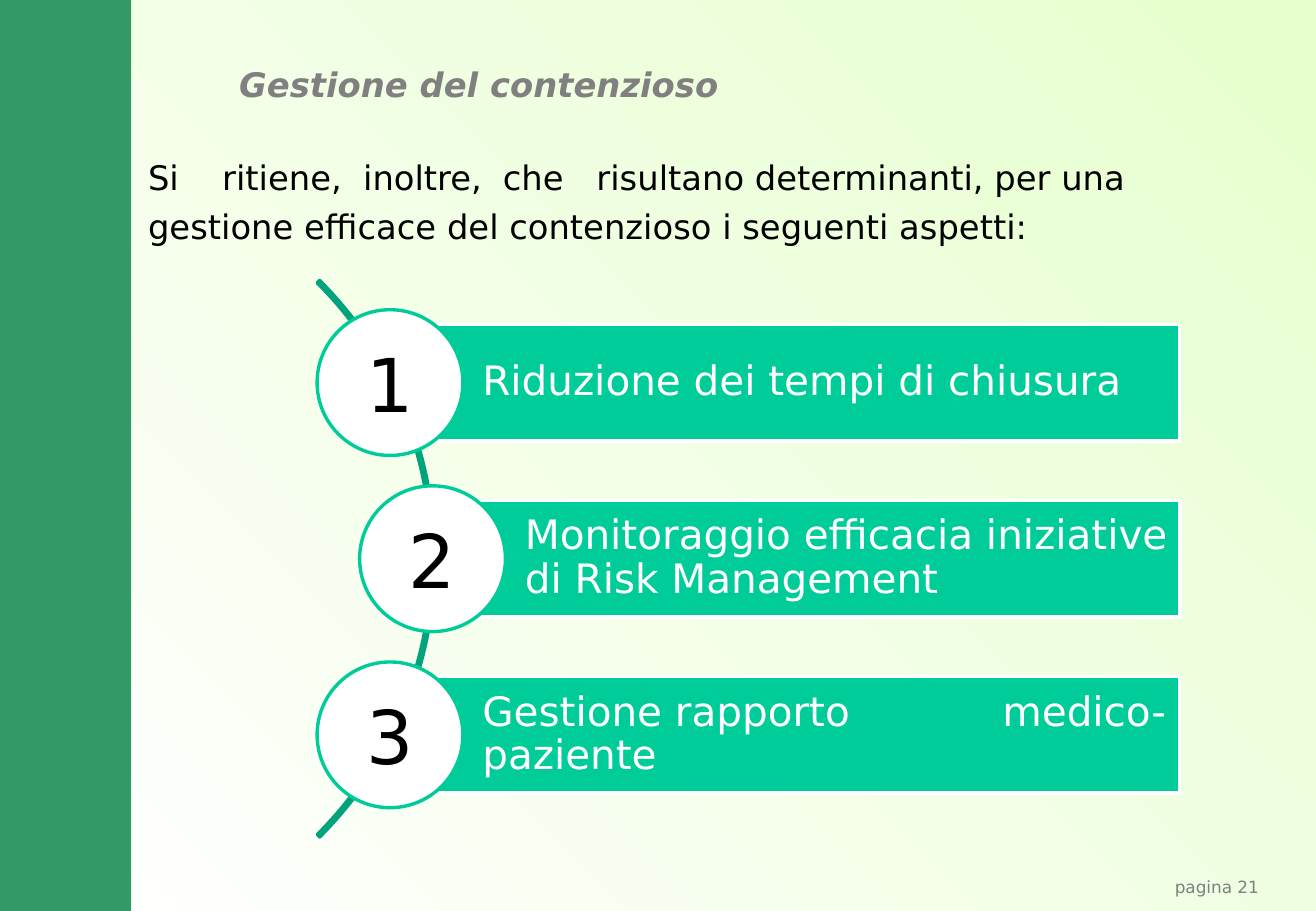
from pptx import Presentation
from pptx import util as u
from pptx.dml.color import RGBColor
from pptx.enum import shapes, text
from pptx.oxml.ns import qn
from lxml import etree

FONT = "DejaVu Sans"
COLORS = {
    "white": "FFFFFF", "lime": "E6FFCD", "band": "339966", "bar": "00CC99",
    "arc": "00A37B", "gray": "808080", "black": "000000",
}
MSO = shapes.MSO_SHAPE
ALIGN = text.PP_ALIGN
ANCHOR = text.MSO_ANCHOR


class Deck:
    """Holds the style and the current slide."""

    def __init__(self, width, height):
        self.prs = Presentation()
        self.prs.slide_width = u.Inches(width)
        self.prs.slide_height = u.Inches(height)
        self.s = self.prs.slides.add_slide(self.prs.slide_layouts[6])

    def color(self, name):
        return RGBColor.from_string(COLORS[name])

    def background(self, start, end, angle):
        fill = self.s.background.fill
        fill.gradient()
        fill.gradient_angle = angle
        for stop, name in zip(fill.gradient_stops, (start, end)):
            stop.color.rgb = self.color(name)

    def shape(self, kind, box, fill, line=None):
        sp = self.s.shapes.add_shape(kind, *map(u.Inches, box))
        sp.shadow.inherit = False
        sp.fill.solid()
        sp.fill.fore_color.rgb = self.color(fill)
        if line:
            sp.line.color.rgb = self.color(line)
            sp.line.width = u.Pt(2)
        else:
            sp.line.fill.background()
        return sp

    def put_text(self, sp, lines, size, color, align=ALIGN.LEFT, anchor=ANCHOR.MIDDLE,
                 insets=(0.1, 0.05, 0.1, 0.05), before=0, spacing=1, tabs=(), bold=False):
        tf = sp.text_frame
        tf.word_wrap = True
        tf.vertical_anchor = anchor
        tf.margin_left, tf.margin_top, tf.margin_right, tf.margin_bottom = map(u.Inches, insets)
        for i, line in enumerate(lines):
            p = tf.add_paragraph() if i else tf.paragraphs[0]
            p.alignment = align
            p.line_spacing = spacing
            if i:
                p.space_before = u.Pt(before)
            if "\t" in line:
                tab_list = etree.SubElement(p._p.get_or_add_pPr(), qn("a:tabLst"))
                for pos in tabs:
                    etree.SubElement(tab_list, qn("a:tab"), pos=str(u.Inches(pos)), algn="l")
            r = p.add_run()
            r.text = line
            r.font.name = FONT
            r.font.size = u.Pt(size)
            r.font.bold = r.font.italic = bold
            r.font.color.rgb = self.color(color)

    def label(self, box, lines, size, color, **style):
        self.put_text(self.s.shapes.add_textbox(*map(u.Inches, box)), lines, size, color, **style)

    def arc(self, box, start, end, thickness):
        sp = self.shape(MSO.BLOCK_ARC, box, "arc", "arc")
        for i, value in enumerate((start * 0.6, end * 0.6, thickness)):
            sp.adjustments[i] = value

    def step(self, number, caption, center_x, center_y):
        right, half, radius = 9.71, 0.48, 0.6
        bar = self.shape(MSO.RECTANGLE,
                         (center_x, center_y - half, right - center_x, 2 * half), "bar", "white")
        self.put_text(bar, [caption], 24, "white", insets=(0.76, 0.07, 0.07, 0.07),
                      spacing=0.9, tabs=(4.28,))
        circle = self.shape(MSO.OVAL, (center_x - radius, center_y - radius, 2 * radius, 2 * radius),
                            "white", "bar")
        self.put_text(circle, [str(number)], 44, "black", align=ALIGN.CENTER, insets=(0, 0, 0, 0))


def main():
    d = Deck(10.83, 7.5)
    d.background("white", "lime", 45)
    d.shape(MSO.RECTANGLE, (0, 0, 1.08, 7.5), "band")
    d.label((9.57, 7.17, 1.26, 0.33), ["pagina 21"], 10, "gray", anchor=ANCHOR.TOP)
    d.label((1.87, 0.47, 8.58, 0.45), ["Gestione del contenzioso"], 20, "gray", bold=True)
    d.label((1.12, 1.24, 8.95, 0.9), [
        "Si\tritiene,\tinoltre,\tche\trisultano determinanti, per una",
        "gestione efficace del contenzioso i seguenti aspetti:",
    ], 20, "black", anchor=ANCHOR.TOP, before=5, tabs=(0.61, 1.77, 2.92, 3.69))

    d.arc((-2.9, 1.36, 6.48, 6.48), 315, 45, 0.0044)
    steps = [
        ("Riduzione dei tempi di chiusura", 3.21),
        ("Monitoraggio efficacia iniziative di Risk Management", 3.56),
        ("Gestione rapporto\tmedico-paziente", 3.21),
    ]
    for i, (caption, center_x) in enumerate(steps):
        d.step(i + 1, caption, center_x, 3.15 + 1.45 * i)
    d.prs.save("out.pptx")


if __name__ == "__main__":
    main()
